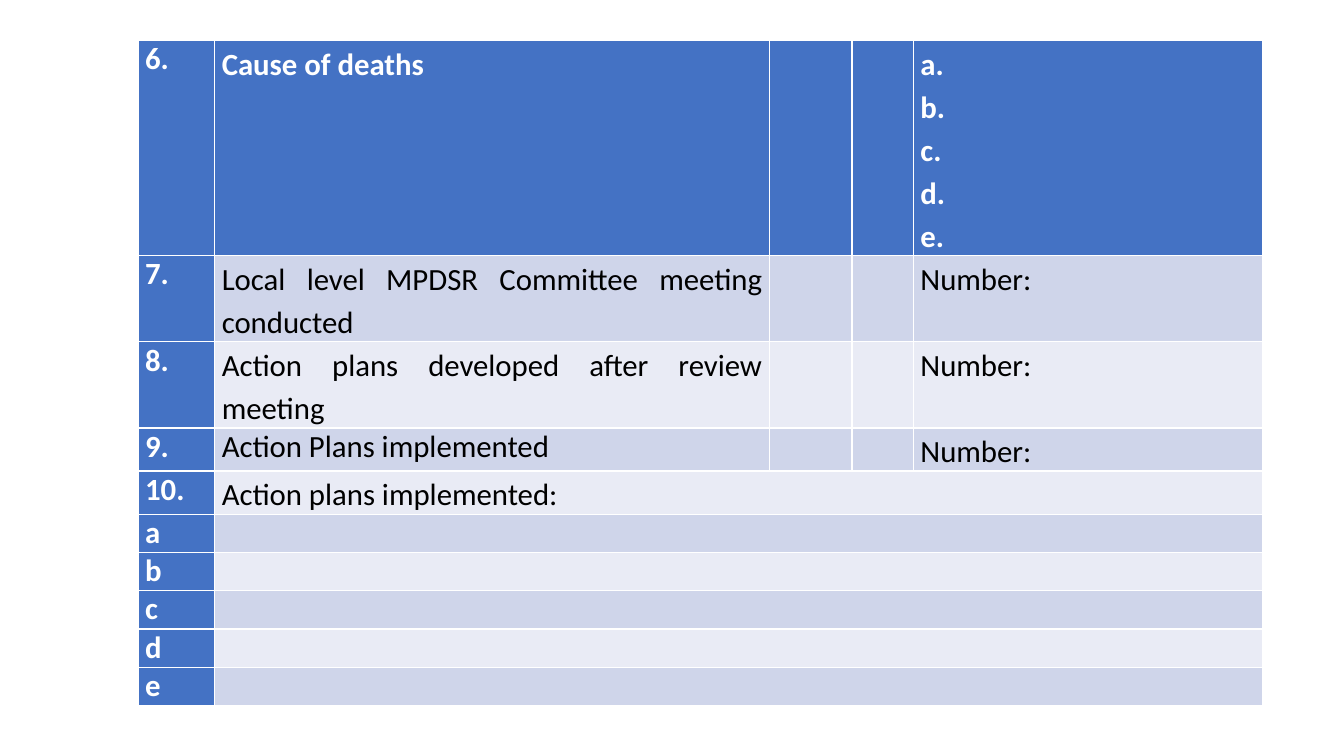
from pptx import Presentation
from pptx.dml.color import RGBColor
from pptx.enum.text import PP_ALIGN
from pptx.util import Inches, Pt

BLUE, WHITE, BLACK = "4472C4", "FFFFFF", "000000"
BANDS = ["CFD5EA", "E9EBF5"]
COLUMN_WIDTHS = [0.76, 5.5, 0.82, 0.61, 3.46]
HEADER_HEIGHT, MEETING_HEIGHT, ROW_HEIGHT = 1.91, 0.74, 0.38
LOOSE = 1.15

# Number, item, answer lines, item line spacing
INDICATORS = [
    ("6.", "Cause of deaths", ["a.", "b.", "c.", "d.", "e."], LOOSE),
    ("7.", "Local level MPDSR Committee meeting conducted", ["Number:"], LOOSE),
    ("8.", "Action plans developed after review meeting", ["Number:"], LOOSE),
    ("9.", "Action Plans implemented", ["Number:"], 1.0),
]
# Number, text across the remaining columns
IMPLEMENTED = [("10.", "Action plans implemented:")] + [(letter, "") for letter in "abcde"]


def rgb(value):
    return RGBColor.from_string(value)


def write_cell(cell, lines, heading, spacing=1.0, space_after=0):
    """Write one paragraph per line; space_after applies to the last one."""
    frame = cell.text_frame
    for index, line in enumerate(lines):
        paragraph = frame.paragraphs[0] if index == 0 else frame.add_paragraph()
        paragraph.alignment = PP_ALIGN.JUSTIFY
        paragraph.line_spacing = spacing
        run = paragraph.add_run()
        run.text = line
        run.font.name = "Calibri"
        run.font.size = Pt(22)
        run.font.bold = heading
        run.font.color.rgb = rgb(WHITE if heading else BLACK)
    paragraph.space_after = Pt(space_after)


def format_cells(table):
    for r, row in enumerate(table.rows):
        for c, cell in enumerate(row.cells):
            cell.margin_left = cell.margin_right = Inches(0.07)
            cell.margin_top = cell.margin_bottom = 0
            cell.fill.solid()
            heading = r == 0 or c == 0
            cell.fill.fore_color.rgb = rgb(BLUE if heading else BANDS[(r - 1) % 2])


def add_review_table(slide):
    row_count = len(INDICATORS) + len(IMPLEMENTED)
    heights = [HEADER_HEIGHT, MEETING_HEIGHT] + [ROW_HEIGHT] * (row_count - 2)
    table = slide.shapes.add_table(
        row_count, len(COLUMN_WIDTHS), Inches(1.37), Inches(0.4),
        Inches(sum(COLUMN_WIDTHS)), Inches(sum(heights))).table
    table.first_col = True
    for column, width in zip(table.columns, COLUMN_WIDTHS):
        column.width = Inches(width)
    for row, height in zip(table.rows, heights):
        row.height = Inches(height)
    format_cells(table)
    return table


def fill_indicators(table):
    for r, (number, item, answers, spacing) in enumerate(INDICATORS):
        header = r == 0
        write_cell(table.cell(r, 0), [number], True)
        write_cell(table.cell(r, 1), [item], header, spacing)
        write_cell(table.cell(r, 4), answers, header, LOOSE, space_after=10)


def fill_implemented(table):
    for r, (number, item) in enumerate(IMPLEMENTED, start=len(INDICATORS)):
        write_cell(table.cell(r, 0), [number], True)
        table.cell(r, 1).merge(table.cell(r, 4))
        if item:
            write_cell(table.cell(r, 1), [item], False, LOOSE, space_after=10)


def main():
    deck = Presentation()
    deck.slide_width, deck.slide_height = Inches(13.33), Inches(7.5)
    slide = deck.slides.add_slide(deck.slide_layouts[6])
    table = add_review_table(slide)
    fill_indicators(table)
    fill_implemented(table)
    deck.save("out.pptx")


if __name__ == "__main__":
    main()
